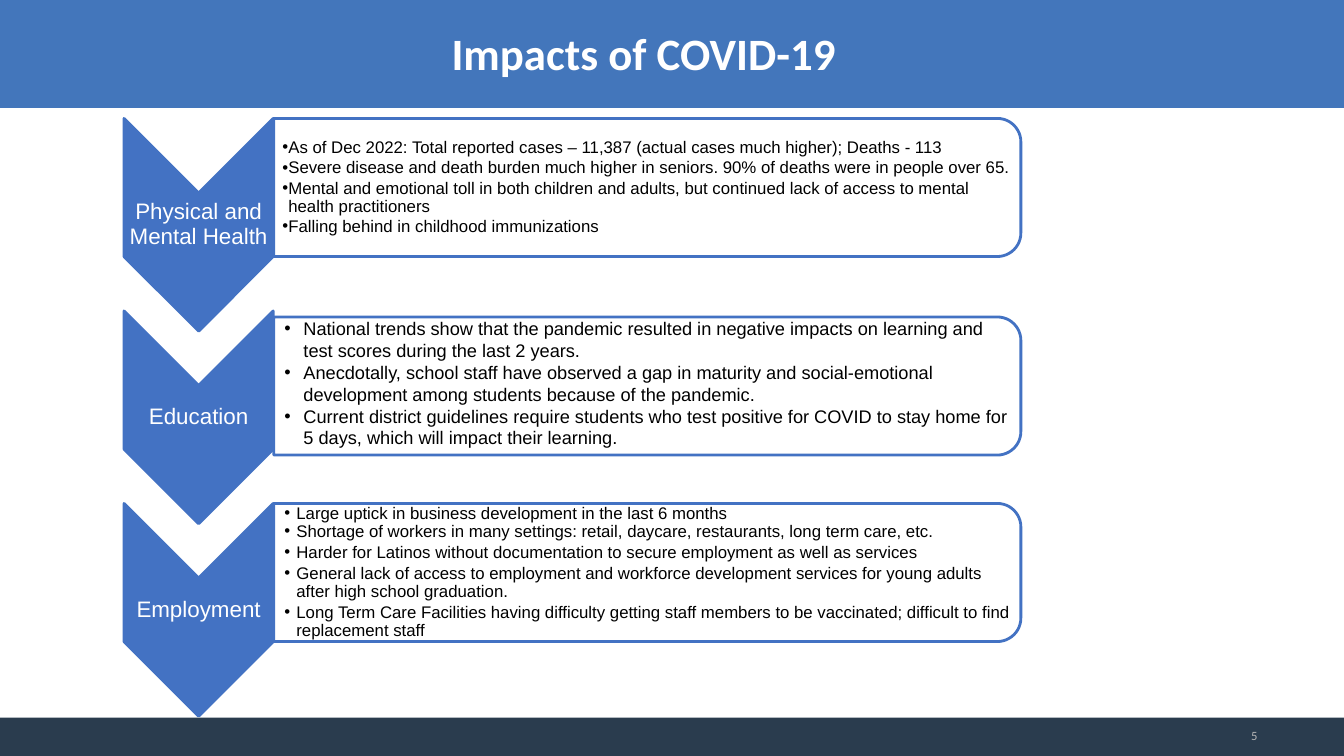
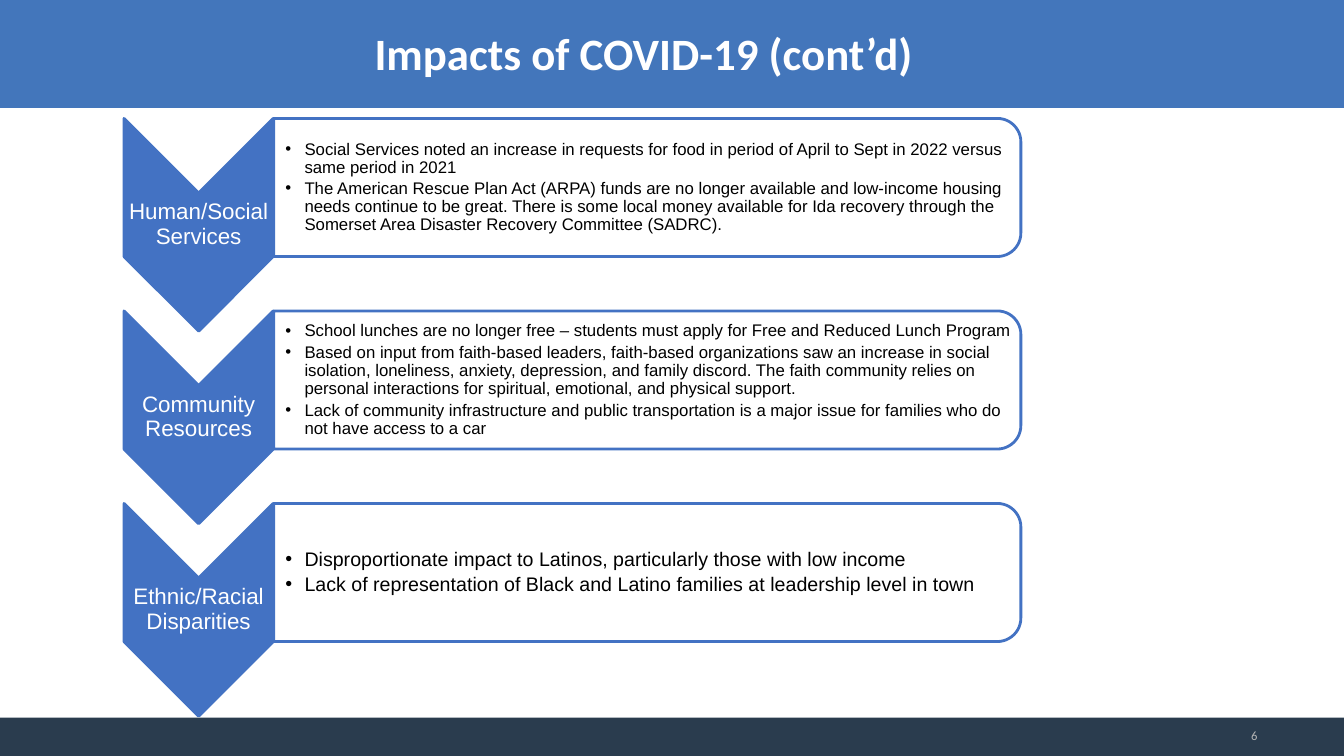
"""Build two slides on the impacts of COVID-19 as rows of chevrons and bullet panels."""
from dataclasses import dataclass

from lxml import etree
from pptx import Presentation
from pptx import util as u
from pptx.dml.color import RGBColor
from pptx.enum import shapes, text
from pptx.oxml import ns

HEADER_BLUE = RGBColor(0x43, 0x76, 0xBB)
FOOTER_NAVY = RGBColor(0x2A, 0x3C, 0x4E)
ROW_BLUE = RGBColor(0x43, 0x72, 0xC3)
NUMBER_GRAY = RGBColor(0xB5, 0xB5, 0xB5)
WHITE = RGBColor(0xFF, 0xFF, 0xFF)
BLACK = RGBColor(0, 0, 0)

HEADING_FONT = "Calibri"
BODY_FONT = "Arial"
SLIDE_WIDTH, SLIDE_HEIGHT = 13.33, 7.5
COMPARISON_LAYOUT = 4
FIRST_NUMBER = 5

ROW_PITCH = 1.91
CHEVRON_CENTER = (1.97, 2.23)
CHEVRON_SIZE = (2.11, 1.48)
LABEL_SIZE = (1.48, 0.63)
PANEL_CENTER = (6.42, 1.86)
PANEL_SIZE = (1.37, 7.41)
LIST_CENTER = (6.38, 1.86)
LIST_SIZE = (7.34, 1.24)


@dataclass(frozen=True)
class Box:
    """A frame in inches."""

    left: float
    top: float
    width: float
    height: float

    @classmethod
    def around(cls, center: tuple, size: tuple, shift: float = 0) -> "Box":
        """Return a frame around a centre that is moved down by a shift."""
        return cls(center[0] - size[0] / 2, center[1] + shift - size[1] / 2, *size)

    def lengths(self) -> tuple:
        """Return left, top, width and height as lengths."""
        return tuple(map(u.Inches, (self.left, self.top, self.width, self.height)))


@dataclass(frozen=True)
class TextStyle:
    """The font and alignment of a text."""

    size: float
    color: RGBColor
    font: str = BODY_FONT
    bold: bool = False
    align: text.PP_ALIGN = text.PP_ALIGN.CENTER
    line_spacing: float = 1.0


@dataclass(frozen=True)
class ImpactRow:
    """A chevron label with its panel of bullets."""

    label: str
    bullets: tuple
    size: float = 12
    indent: float = 0.19
    inset: float = 0.12
    gap: float = 2.4
    tight_count: int = 1
    line_spacing: float = 0.9
    drop: float = 0


@dataclass(frozen=True)
class ImpactSlide:
    """A title and its rows."""

    title: str
    rows: tuple


TITLE_BOX = Box(0.2, 0.26, 12.37, 0.54)
NUMBER_BOX = Box(9.58, 7.1, 2.99, 0.4)
BANDS = (
    (Box(0, 0, SLIDE_WIDTH, 1.07), HEADER_BLUE),
    (Box(0, 7.12, SLIDE_WIDTH, 0.38), FOOTER_NAVY),
)
TITLE_STYLE = TextStyle(32, WHITE, HEADING_FONT, True)
NUMBER_STYLE = TextStyle(9, NUMBER_GRAY, HEADING_FONT, align=text.PP_ALIGN.RIGHT)
LABEL_STYLE = TextStyle(16, WHITE, line_spacing=0.9)

SLIDES = (
    ImpactSlide("Impacts of COVID-19", (
        ImpactRow("Physical and Mental Health", (
            "As of Dec 2022: Total reported cases – 11,387 (actual cases much higher); Deaths - 113",
            "Severe disease and death burden much higher in seniors. "
            "90% of deaths were in people over 65.",
            "Mental and emotional toll in both children and adults, "
            "but continued lack of access to mental health practitioners",
            "Falling behind in childhood immunizations",
        ), indent=0.06, inset=0.09, gap=1.6),
        ImpactRow("Education", (
            "National trends show that the pandemic resulted in negative impacts on learning "
            "and test scores during the last 2 years.",
            "Anecdotally, school staff have observed a gap in maturity and social-emotional "
            "development among students because of the pandemic.",
            "Current district guidelines require students who test positive for COVID "
            "to stay home for 5 days, which will impact their learning.",
        ), size=13, inset=0.11, gap=0, line_spacing=1.0, drop=0.06),
        ImpactRow("Employment", (
            "Large uptick in business development in the last 6 months",
            "Shortage of workers in many settings: retail, daycare, restaurants, long term care, etc.",
            "Harder for Latinos without documentation to secure employment as well as services",
            "General lack of access to employment and workforce development services "
            "for young adults after high school graduation.",
            "Long Term Care Facilities having difficulty getting staff members to be vaccinated; "
            "difficult to find replacement staff",
        ), indent=0.12, inset=0.11, gap=2.1, tight_count=2),
    )),
    ImpactSlide("Impacts of COVID-19 (cont’d)", (
        ImpactRow("Human/Social Services", (
            "Social Services noted an increase in requests for food in period of "
            "April to Sept in 2022 versus same period in 2021",
            "The American Rescue Plan Act (ARPA) funds are no longer available and low-income "
            "housing needs continue to be great. There is some local money available for Ida "
            "recovery through the Somerset Area Disaster Recovery Committee (SADRC).",
        )),
        ImpactRow("Community Resources", (
            "School lunches are no longer free – students must apply for "
            "Free and Reduced Lunch Program",
            "Based on input from faith-based leaders, faith-based organizations saw an increase "
            "in social isolation, loneliness, anxiety, depression, and family discord. The faith "
            "community relies on personal interactions for spiritual, emotional, and physical support.",
            "Lack of community infrastructure and public transportation is a major issue "
            "for families who do not have access to a car",
        )),
        ImpactRow("Ethnic/Racial Disparities", (
            "Disproportionate impact to Latinos, particularly those with low income",
            "Lack of representation of Black and Latino families at leadership level in town",
        ), size=14),
    )),
)


def place(shape, box: Box) -> None:
    """Move and size a shape."""
    shape.left, shape.top, shape.width, shape.height = box.lengths()


def set_frame(frame, insets: tuple, anchor=text.MSO_ANCHOR.MIDDLE) -> None:
    """Set wrapping, anchor and insets of a text frame."""
    frame.word_wrap = True
    frame.auto_size = text.MSO_AUTO_SIZE.NONE
    frame.vertical_anchor = anchor
    (frame.margin_left, frame.margin_top,
     frame.margin_right, frame.margin_bottom) = map(u.Inches, insets)


def format_paragraph(paragraph, style: TextStyle, space_before: float = 0) -> None:
    """Apply a text style to a paragraph and its runs."""
    paragraph.alignment = style.align
    paragraph.line_spacing = style.line_spacing
    paragraph.space_before = u.Pt(space_before)
    for run in paragraph.runs:
        run.font.name = style.font
        run.font.size = u.Pt(style.size)
        run.font.bold = style.bold
        run.font.color.rgb = style.color


def add_bullet(paragraph, indent: float, hang: float) -> None:
    """Give a paragraph a black round bullet with a hanging indent."""
    properties = paragraph._p.get_or_add_pPr()
    properties.set("marL", str(u.Inches(indent)))
    properties.set("indent", str(-u.Inches(hang)))
    color = etree.SubElement(properties, ns.qn("a:buClr"))
    etree.SubElement(color, ns.qn("a:srgbClr"), val=str(BLACK))
    etree.SubElement(properties, ns.qn("a:buFont"), typeface=BODY_FONT)
    etree.SubElement(properties, ns.qn("a:buChar"), char="•")


def add_filled_shape(slide, kind, box: Box, fill: RGBColor, line: RGBColor | None = None):
    """Add a flat preset shape, outlined if a line colour is given."""
    shape = slide.shapes.add_shape(kind, *box.lengths())
    shape.shadow.inherit = False
    shape.fill.solid()
    shape.fill.fore_color.rgb = fill
    if line is None:
        shape.line.fill.background()
    else:
        shape.line.color.rgb = line
        shape.line.width = u.Pt(2)
    return shape


def add_text(slide, box: Box, words: str, style: TextStyle, insets: tuple) -> None:
    """Add a one-paragraph text box."""
    frame = slide.shapes.add_textbox(*box.lengths()).text_frame
    set_frame(frame, insets)
    frame.text = words
    format_paragraph(frame.paragraphs[0], style)


def add_bands(slide) -> None:
    """Draw the header and footer bands and hand them to the shared layout."""
    for box, color in BANDS:
        band = add_filled_shape(slide, shapes.MSO_SHAPE.RECTANGLE, box, color)
        slide.slide_layout.shapes.element.insert(2, band.element)


def fill_list(placeholder, row: ImpactRow, shift: float) -> None:
    """Write the bullets of a row into a body placeholder."""
    place(placeholder, Box.around(LIST_CENTER, LIST_SIZE, shift + row.drop / 2))
    frame = placeholder.text_frame
    set_frame(frame, (row.inset, 0.01, 0.01, 0.01))
    frame.text = "\n".join(row.bullets)
    style = TextStyle(row.size, BLACK, align=text.PP_ALIGN.LEFT,
                      line_spacing=row.line_spacing)
    for index, paragraph in enumerate(frame.paragraphs):
        add_bullet(paragraph, row.indent, max(row.indent, 0.09))
        format_paragraph(paragraph, style, 0 if index < row.tight_count else row.gap)


def add_row(slide, row: ImpactRow, shift: float, placeholder) -> None:
    """Draw a chevron with its label, and a panel with its list on top."""
    chevron = add_filled_shape(slide, shapes.MSO_SHAPE.CHEVRON,
                               Box.around(CHEVRON_CENTER, CHEVRON_SIZE, shift),
                               ROW_BLUE, ROW_BLUE)
    chevron.adjustments[0] = 0.5
    panel = add_filled_shape(slide, shapes.MSO_SHAPE.ROUND_2_SAME_RECTANGLE,
                             Box.around(PANEL_CENTER, PANEL_SIZE, shift + row.drop),
                             WHITE, ROW_BLUE)
    panel.adjustments[0], panel.adjustments[1] = 0.17, 0
    fill_color = panel.element.spPr.find(ns.qn("a:solidFill"))[0]
    etree.SubElement(fill_color, ns.qn("a:alpha"), val="89000")
    chevron.rotation = panel.rotation = 90
    add_text(slide, Box.around(CHEVRON_CENTER, LABEL_SIZE, shift), row.label,
             LABEL_STYLE, (0.01,) * 4)
    fill_list(placeholder, row, shift)
    slide.shapes.element.append(placeholder.element)


def add_slide(presentation, content: ImpactSlide, number: int):
    """Add a slide with its title, rows and number."""
    slide = presentation.slides.add_slide(presentation.slide_layouts[COMPARISON_LAYOUT])
    title, *bodies, spare = list(slide.placeholders)
    spare.element.getparent().remove(spare.element)
    place(title, TITLE_BOX)
    set_frame(title.text_frame, (0,) * 4, text.MSO_ANCHOR.TOP)
    title.text_frame.text = content.title
    format_paragraph(title.text_frame.paragraphs[0], TITLE_STYLE)
    for index, (row, body) in enumerate(zip(content.rows, bodies)):
        add_row(slide, row, index * ROW_PITCH, body)
    add_text(slide, NUMBER_BOX, str(number), NUMBER_STYLE, (0.1, 0.05, 0.1, 0.05))
    return slide


def main() -> None:
    """Build and save the presentation."""
    presentation = Presentation()
    presentation.slide_width = u.Inches(SLIDE_WIDTH)
    presentation.slide_height = u.Inches(SLIDE_HEIGHT)
    slides = [add_slide(presentation, content, number)
              for number, content in enumerate(SLIDES, FIRST_NUMBER)]
    add_bands(slides[0])
    presentation.save("out.pptx")


if __name__ == "__main__":
    main()
